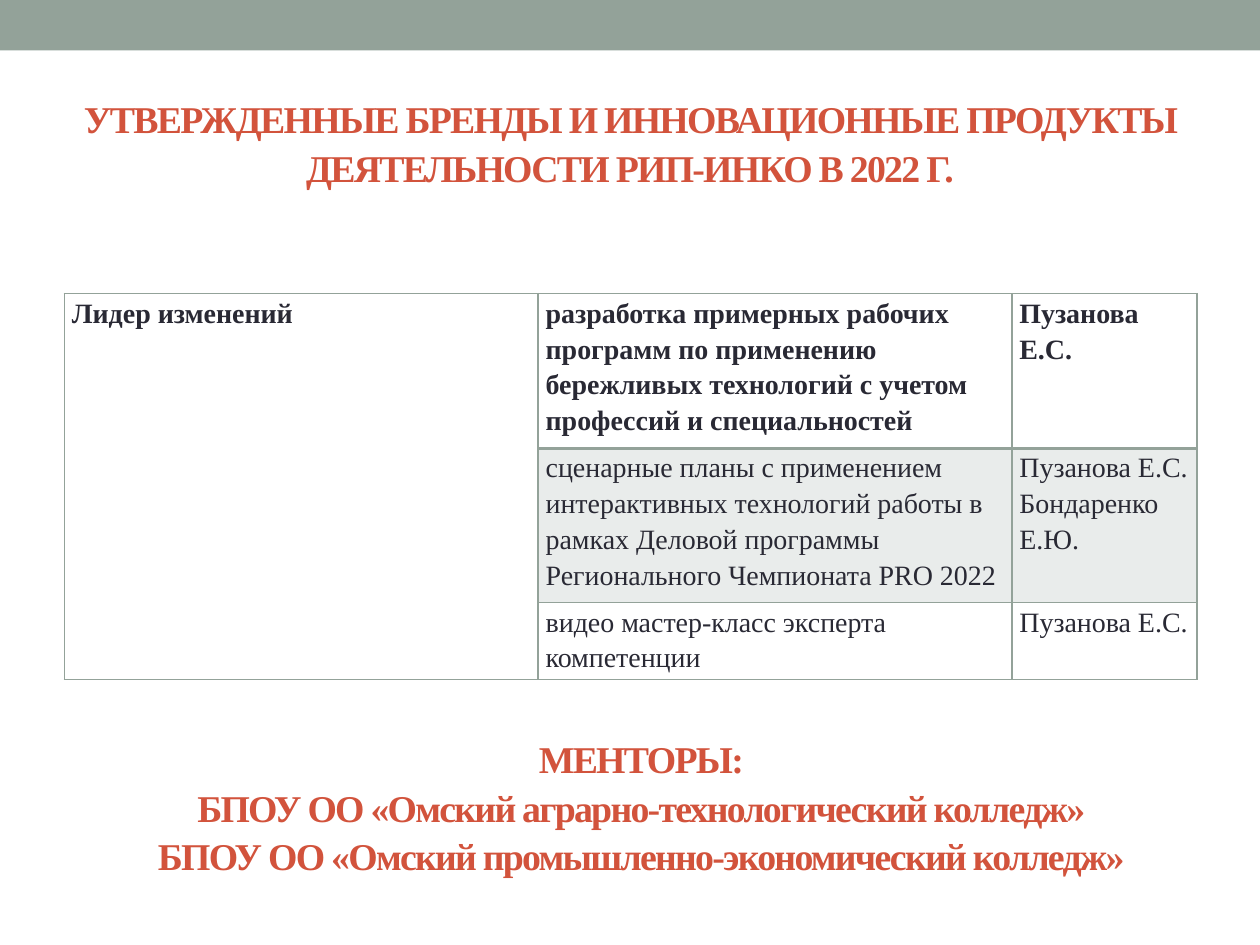
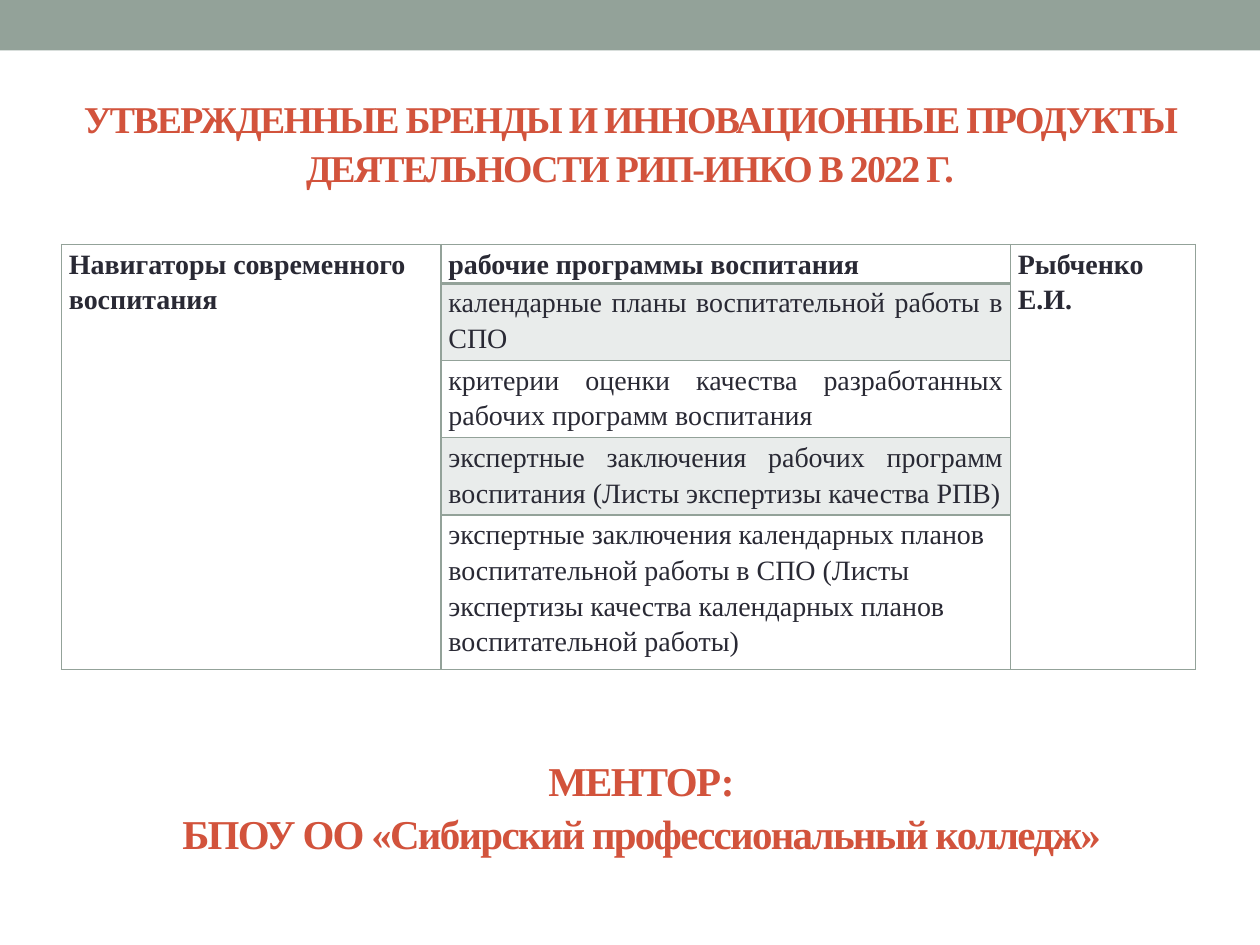
"""Build two slides on approved brands, their products and mentors."""
from dataclasses import dataclass

from lxml.etree import SubElement as Sub
from pptx import Presentation
from pptx.dml.color import RGBColor
from pptx.enum.shapes import MSO_SHAPE as Shape
from pptx.enum.text import MSO_ANCHOR as Anchor, PP_ALIGN as Align
from pptx.oxml.ns import qn
from pptx.slide import Slide
from pptx.table import _Cell as Cell
from pptx.text.text import TextFrame as Frame
from pptx.util import Cm, Pt

SAGE = RGBColor(0x93, 0xA2, 0x99)
PALE = RGBColor(0xE9, 0xEC, 0xEB)
WHITE = RGBColor(0xFF, 0xFF, 0xFF)
RUST = RGBColor(0xD2, 0x53, 0x3C)
INK = RGBColor(0x29, 0x29, 0x34)
FONT = "Times New Roman"
LINE = 0.72
TITLE = "УТВЕРЖДЕННЫЕ БРЕНДЫ И ИННОВАЦИОННЫЕ ПРОДУКТЫ ДЕЯТЕЛЬНОСТИ РИП-ИНКО В 2022 Г."


@dataclass(frozen=True)
class Item:
    """A table cell that may span several rows."""
    row: int
    col: int
    text: str
    span: int = 1
    align: Align = Align.LEFT


@dataclass(frozen=True)
class Grid:
    """A table: its place, column widths, lines per row and cells."""
    left: float
    top: float
    cols: tuple[float, ...]
    lines: tuple[int, ...]
    items: tuple[Item, ...]


@dataclass(frozen=True)
class Page:
    """What differs from slide to slide."""
    grid: Grid
    mentors: str
    size: float


PAGES = (
    Page(
        Grid(1.3, 5.92, (9.55, 9.55, 3.73), (4, 4, 2), (
            Item(0, 0, "Лидер изменений", 3),
            Item(0, 1, "разработка примерных рабочих программ по применению "
                       "бережливых технологий с учетом профессий и специальностей"),
            Item(0, 2, "Пузанова Е.С."),
            Item(1, 1, "сценарные планы с применением интерактивных технологий работы "
                       "в рамках Деловой программы Регионального Чемпионата PRO 2022"),
            Item(1, 2, "Пузанова Е.С.\nБондаренко Е.Ю."),
            Item(2, 1, "видео мастер-класс эксперта компетенции"),
            Item(2, 2, "Пузанова Е.С."),
        )),
        "МЕНТОРЫ:\nБПОУ ОО «Омский аграрно-технологический колледж»\n"
        "БПОУ ОО «Омский промышленно-экономический колледж»",
        21.6,
    ),
    Page(
        Grid(1.24, 4.93, (7.65, 11.48, 3.73), (1, 2, 2, 2, 4), (
            Item(0, 0, "Навигаторы современного воспитания", 5),
            Item(0, 1, "рабочие программы воспитания", align=Align.JUSTIFY),
            Item(0, 2, "Рыбченко Е.И.", 5),
            Item(1, 1, "календарные планы воспитательной работы в СПО",
                 align=Align.JUSTIFY),
            Item(2, 1, "критерии оценки качества разработанных рабочих программ воспитания",
                 align=Align.JUSTIFY),
            Item(3, 1, "экспертные заключения рабочих программ воспитания "
                       "(Листы экспертизы качества РПВ)", align=Align.JUSTIFY),
            Item(4, 1, "экспертные заключения календарных планов воспитательной работы в СПО "
                       "(Листы экспертизы качества календарных планов воспитательной работы)"),
        )),
        "МЕНТОР:\nБПОУ ОО «Сибирский профессиональный колледж»",
        23.4,
    ),
)


def write(frame: Frame, text: str, *, size: float, color: RGBColor, bold: bool = True,
          align: Align = Align.LEFT, space: float = 1.0, track: int = 0) -> None:
    """Fill a frame with one paragraph per line of text."""
    frame.word_wrap = True
    for num, line in enumerate(text.split("\n")):
        para = frame.add_paragraph() if num else frame.paragraphs[0]
        para.alignment, para.line_spacing = align, space
        run = para.add_run()
        run.text = line
        font = run.font
        font.name, font.size, font.bold = FONT, Pt(size), bold
        font.color.rgb = color
        if track:
            font._element.set("spc", str(track))


def add_band(slide: Slide) -> None:
    """Draw the band along the top edge."""
    band = slide.shapes.add_shape(Shape.RECTANGLE, 0, 0, Cm(25.4), Cm(1.02))
    band.shadow.inherit = False
    band.fill.solid()
    band.fill.fore_color.rgb = SAGE
    band.line.fill.background()


def add_head(slide: Slide, text: str, left: float, top: float, size: float) -> None:
    """Place a centred heading."""
    box = slide.shapes.add_textbox(Cm(left), Cm(top), Cm(22.86), Cm(2.74))
    box.text_frame.vertical_anchor = Anchor.MIDDLE
    write(box.text_frame, text, size=size, color=RUST, align=Align.CENTER,
          space=1.08, track=-100)


def style(cell: Cell, fill: RGBColor, edges: dict[str, int]) -> None:
    """Set the margins, borders and fill of a cell."""
    cell.margin_left = cell.margin_right = Cm(0.15)
    cell.margin_top = cell.margin_bottom = 0
    props = cell._tc.get_or_add_tcPr()
    for side, width in edges.items():
        edge = Sub(props, qn(f"a:ln{side}"), w=str(Pt(width)))
        Sub(Sub(edge, qn("a:solidFill")), qn("a:srgbClr"), val=str(SAGE))
    cell.fill.solid()
    cell.fill.fore_color.rgb = fill


def add_grid(slide: Slide, grid: Grid) -> None:
    """Draw a table with a heavy rule below its first row."""
    rows, cols = len(grid.lines), len(grid.cols)
    table = slide.shapes.add_table(
        rows, cols, Cm(grid.left), Cm(grid.top),
        Cm(sum(grid.cols)), Cm(LINE * sum(grid.lines))).table
    table.first_row = table.horz_banding = False
    for col, width in zip(table.columns, grid.cols):
        col.width = Cm(width)
    for row, count in zip(table.rows, grid.lines):
        row.height = Cm(LINE * count)
    tall = {item.col for item in grid.items if item.span > 1}
    for row in range(rows):
        for col in range(cols):
            merged = col in tall
            heavy = row == rows - 1 if merged else row == 0
            edges = {"L": 1, "R": 1, "T": 2 if row == 1 and not merged else 1,
                     "B": 2 if heavy else 1}
            style(table.cell(row, col), PALE if row % 2 and not merged else WHITE, edges)
    for item in grid.items:
        cell = table.cell(item.row, item.col)
        if item.span > 1:
            cell.merge(table.cell(item.row + item.span - 1, item.col))
        write(cell.text_frame, item.text, size=16, color=INK, bold=item.row == 0,
              align=item.align, space=1.15)


def main() -> None:
    """Build and save the deck."""
    deck = Presentation()
    deck.slide_width, deck.slide_height = Cm(25.4), Cm(19.05)
    for page in PAGES:
        slide = deck.slides.add_slide(deck.slide_layouts[6])
        add_band(slide)
        add_head(slide, TITLE, 1.27, 1.48, 21.6)
        add_head(slide, page.mentors, 1.5, 14.86, page.size)
        add_grid(slide, page.grid)
    deck.save("out.pptx")


if __name__ == "__main__":
    main()
